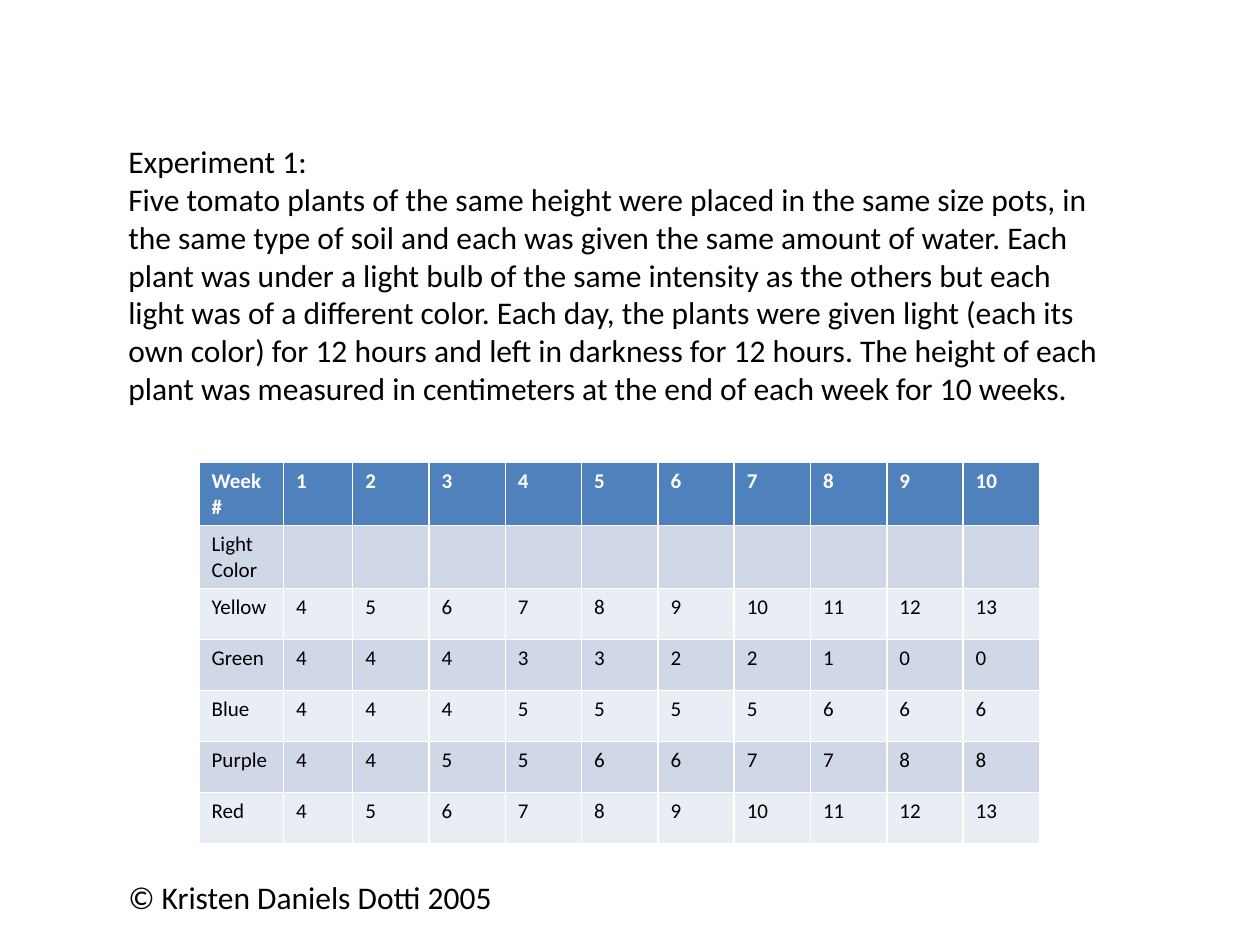
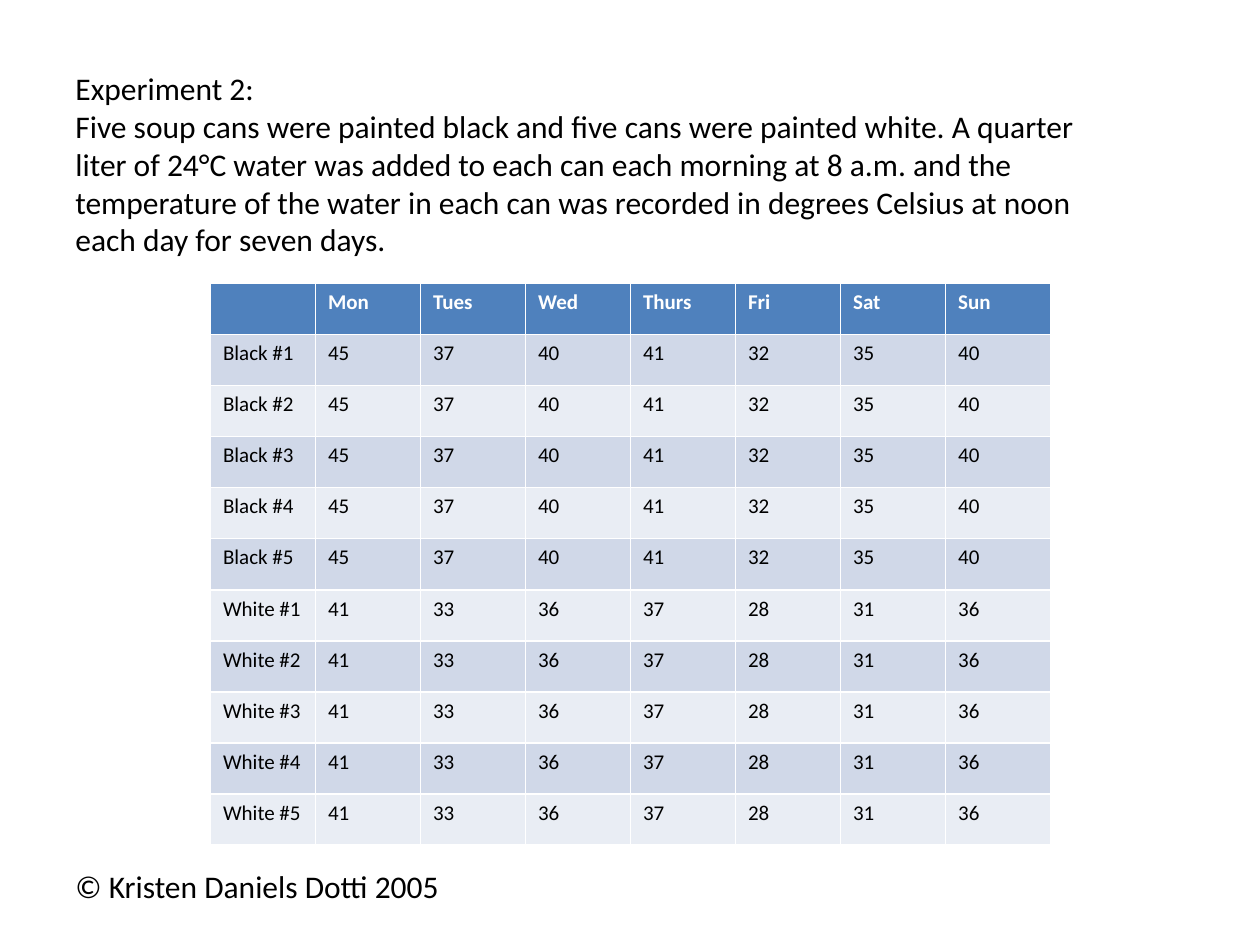
from pptx import Presentation
from pptx.dml.color import RGBColor
from pptx.enum.text import MSO_AUTO_SIZE
from pptx.util import Inches, Pt

COLORS = {
    "text": "000000",
    "header_text": "FFFFFF",
    "header": "4F81BD",
    "odd_band": "D0D8E8",
    "even_band": "E9EDF4",
}
BODY = {"name": "Calibri", "size": Pt(18), "bold": False}
CELL = {"name": "Calibri", "size": Pt(12), "bold": False}
HEADER = CELL | {"bold": True}

CREDIT = "© Kristen Daniels Dotti 2005"
TABLE_WIDTH = 6.67
ROW_HEIGHT = 4.46 / 11
BLACK_CAN = [45, 37, 40, 41, 32, 35, 40]
WHITE_CAN = [41, 33, 36, 37, 28, 31, 36]

EXPERIMENTS = [
    {
        "text_at": (0.92, 1.08, 8, 2.22),
        "lines": [
            "Experiment 1:",
            "Five tomato plants of the same height were placed in the same size pots, "
            "in the same type of soil and each was given the same amount of water. "
            "Each plant was under a light bulb of the same intensity as the others "
            "but each light was of a different color. Each day, the plants were given "
            "light (each its own color) for 12 hours and left in darkness for 12 hours. "
            "The height of each plant was measured in centimeters at the end of each "
            "week for 10 weeks.",
        ],
        "table_at": (1.58, 3.67),
        "first_columns": [0.67, 0.55],
        "rows": [
            ["Week #", *range(1, 11)],
            ["Light Color"] + [""] * 10,
            ["Yellow", *range(4, 14)],
            ["Green", 4, 4, 4, 3, 3, 2, 2, 1, 0, 0],
            ["Blue", 4, 4, 4, 5, 5, 5, 5, 6, 6, 6],
            ["Purple", 4, 4, 5, 5, 6, 6, 7, 7, 8, 8],
            ["Red", *range(4, 14)],
        ],
        "credit_top": 6.92,
    },
    {
        "text_at": (0.5, 0.5, 8.58, 1.62),
        "lines": [
            "Experiment 2:",
            "Five soup cans were painted black and five cans were painted white. A quarter",
            "liter of 24°C water was added to each can each morning at 8 a.m. and the",
            "temperature of the water in each can was recorded in degrees Celsius at noon",
            "each day for seven days.",
        ],
        "table_at": (1.67, 2.25),
        "first_columns": [],
        "rows": [
            ["", "Mon", "Tues", "Wed", "Thurs", "Fri", "Sat", "Sun"],
            *[[f"Black #{can}", *BLACK_CAN] for can in range(1, 6)],
            *[[f"White #{can}", *WHITE_CAN] for can in range(1, 6)],
        ],
        "credit_top": 6.83,
    },
]


def write(frame, lines, formats, color):
    for index, line in enumerate(lines):
        para = frame.paragraphs[0] if index == 0 else frame.add_paragraph()
        span = para.add_run()
        span.text = line
        for name, value in formats.items():
            setattr(span.font, name, value)
        span.font.color.rgb = RGBColor.from_string(COLORS[color])


def add_text(page, place, lines, wrap):
    box = page.shapes.add_textbox(*map(Inches, place))
    box.text_frame.word_wrap = wrap
    box.text_frame.auto_size = MSO_AUTO_SIZE.SHAPE_TO_FIT_TEXT
    write(box.text_frame, lines, BODY, "text")


deck = Presentation()
deck.slide_width = Inches(10)
deck.slide_height = Inches(7.5)
blank_layout = deck.slide_layouts[6]

for experiment in EXPERIMENTS:
    page = deck.slides.add_slide(blank_layout)
    add_text(page, experiment["text_at"], experiment["lines"], True)

    rows = experiment["rows"]
    column_count = len(rows[0])
    left, top = experiment["table_at"]
    table = page.shapes.add_table(
        len(rows), column_count, Inches(left), Inches(top),
        Inches(TABLE_WIDTH), Inches(ROW_HEIGHT * len(rows)),
    ).table

    widths = list(experiment["first_columns"])
    remaining = column_count - len(widths)
    widths += [(TABLE_WIDTH - sum(widths)) / remaining] * remaining
    for column, width in zip(table.columns, widths):
        column.width = Inches(width)

    for row_index, values in enumerate(rows):
        if row_index == 0:
            fill, formats, color = "header", HEADER, "header_text"
        else:
            fill = "odd_band" if row_index % 2 else "even_band"
            formats, color = CELL, "text"
        for column_index, value in enumerate(values):
            cell = table.cell(row_index, column_index)
            cell.fill.solid()
            cell.fill.fore_color.rgb = RGBColor.from_string(COLORS[fill])
            if value != "":
                write(cell.text_frame, [str(value)], formats, color)

    credit_place = (experiment["text_at"][0], experiment["credit_top"], 3.18, 0.4)
    add_text(page, credit_place, [CREDIT], False)

deck.save("out.pptx")
